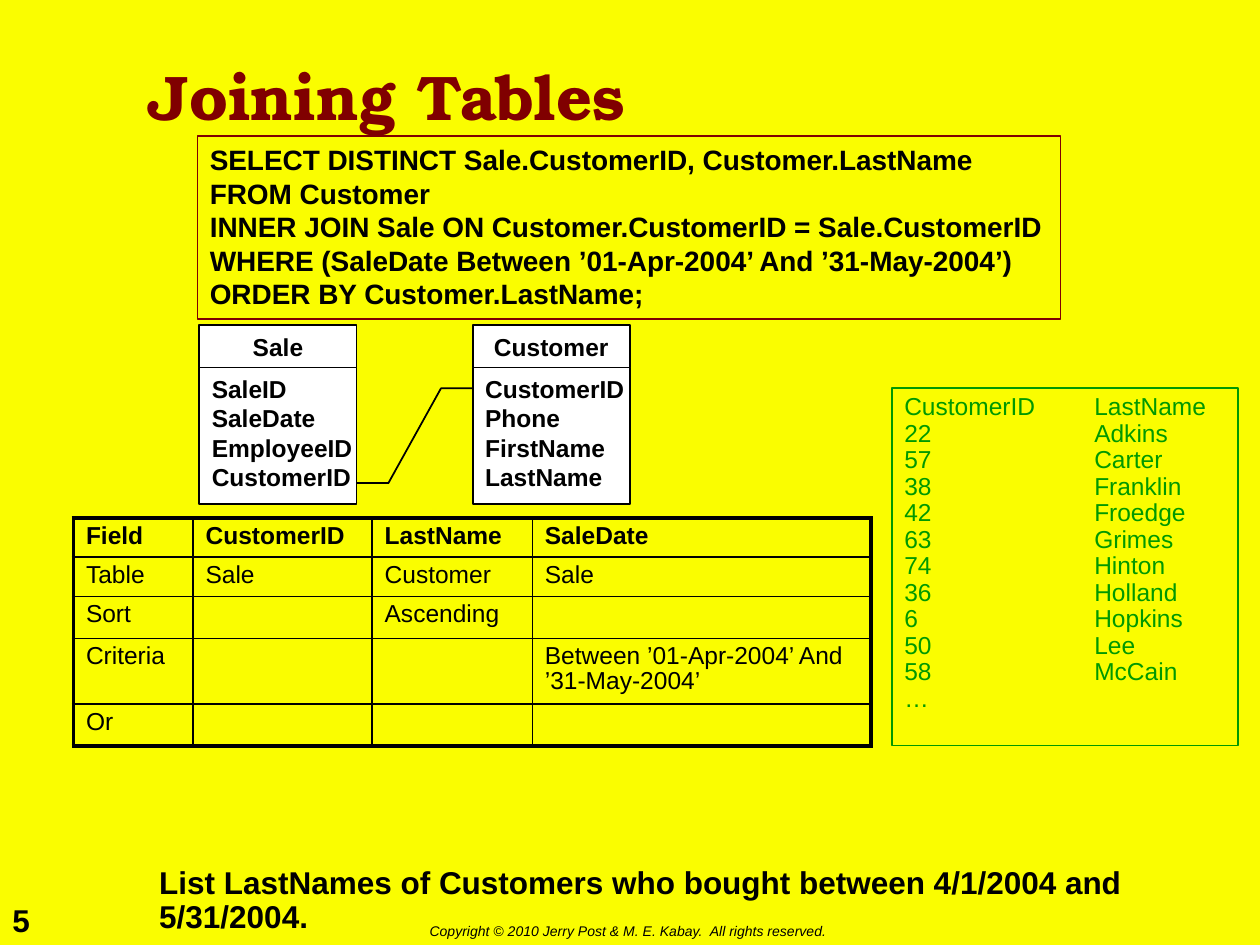
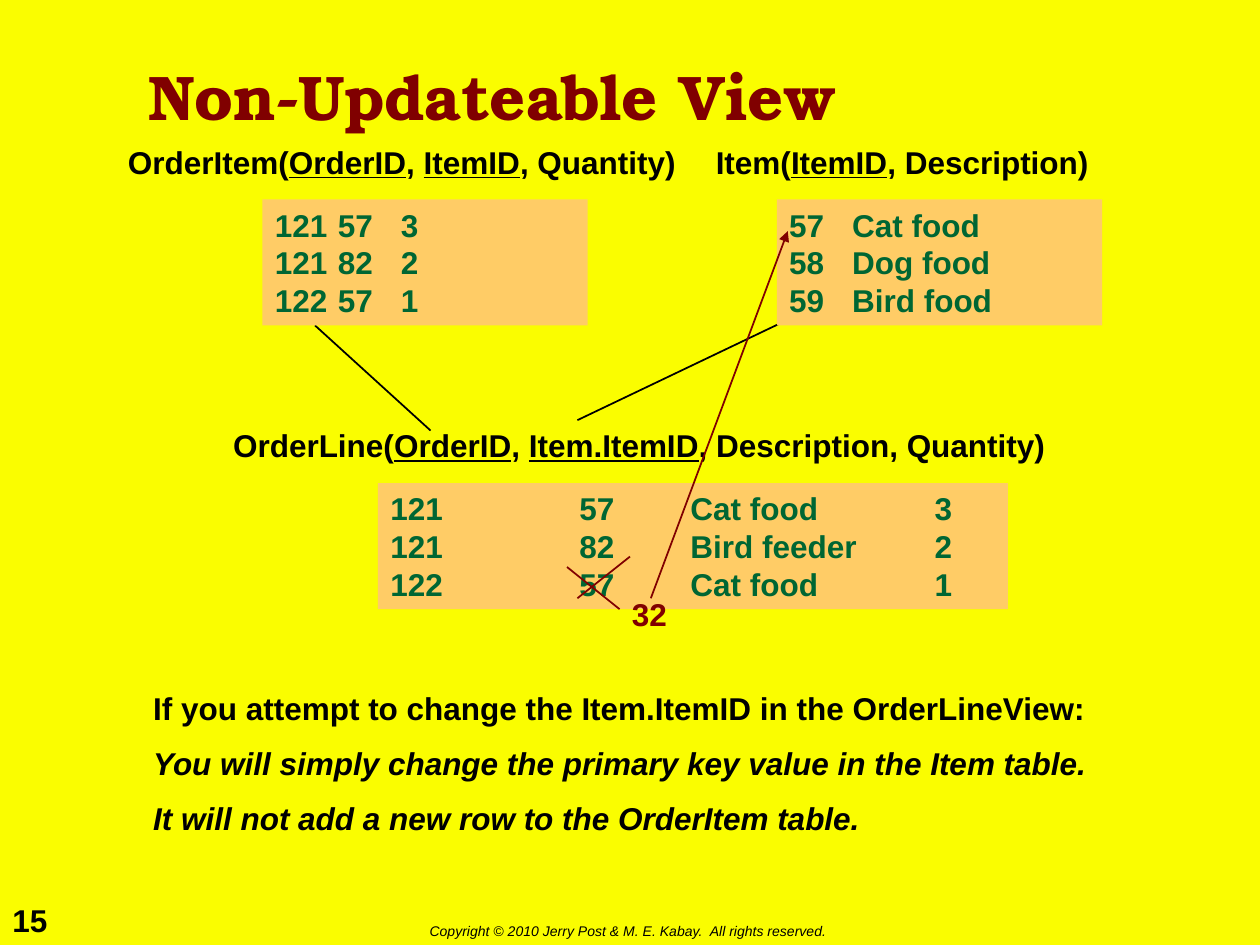
from dataclasses import dataclass
from lxml.etree import SubElement
from pptx import Presentation
from pptx.dml.color import RGBColor
from pptx.enum.shapes import MSO_CONNECTOR, MSO_SHAPE
from pptx.enum.text import MSO_ANCHOR, PP_ALIGN
from pptx.oxml.ns import qn
from pptx.util import Cm, Pt


@dataclass(frozen=True)
class Theme:
    back: RGBColor = RGBColor.from_string("FAFD00")
    black: RGBColor = RGBColor.from_string("000000")
    white: RGBColor = RGBColor.from_string("FFFFFF")
    maroon: RGBColor = RGBColor.from_string("800000")
    green: RGBColor = RGBColor.from_string("009900")
    pine: RGBColor = RGBColor.from_string("006633")
    peach: RGBColor = RGBColor.from_string("FFCC66")
    serif: str = "TeX Gyre Bonum"
    sans: str = "Arial"
    title: int = 36
    large: int = 18
    code: int = 16
    small: int = 14
    foot: int = 8
    thin: float = 1
    thick: float = 2.25


look = Theme()


def write(frame, text, size=look.large, ink=look.black, font=look.sans, bold=True,
          lean=None, wrap=True, mid=False, center=False, pitch=None, gap=0, tabs=()):
    frame.word_wrap = wrap
    frame.vertical_anchor = MSO_ANCHOR.MIDDLE if mid else MSO_ANCHOR.TOP
    for row, line in enumerate(text.split("\n")):
        para = frame.add_paragraph() if row else frame.paragraphs[0]
        if tabs:
            stops = SubElement(para._p.get_or_add_pPr(), qn("a:tabLst"))
            for stop in tabs:
                SubElement(stops, qn("a:tab"), pos=str(Cm(stop)), algn="l")
        para.alignment = PP_ALIGN.CENTER if center else PP_ALIGN.LEFT
        if pitch:
            para.line_spacing = pitch
        if row and gap:
            para.space_before = Pt(gap)
        if not line:
            SubElement(para._p, qn("a:endParaRPr"), sz=str(size * 100))
            continue
        for part, words in enumerate(line.split("_")):
            run = para.add_run()
            run.text = words
            run.font.name, run.font.size = font, Pt(size)
            run.font.bold = bold
            run.font.italic = lean is not None and row >= lean
            run.font.underline = part % 2 == 1
            run.font.color.rgb = ink


def box(page, area, text, fill=None, edge=None, **form):
    place = [Cm(side) for side in area]
    if fill or edge:
        shape = page.shapes.add_shape(MSO_SHAPE.RECTANGLE, *place)
        shape.shadow.inherit = False
    else:
        shape = page.shapes.add_textbox(*place)
    if fill:
        shape.fill.solid()
        shape.fill.fore_color.rgb = fill
    else:
        shape.fill.background()
    if edge:
        shape.line.color.rgb = edge
        shape.line.width = Pt(look.thin)
    else:
        shape.line.fill.background()
    write(shape.text_frame, text, **form)


deck = Presentation()
deck.slide_width, deck.slide_height = Cm(25.4), Cm(19.05)
ground = deck.slide_master.background.fill
ground.solid()
ground.fore_color.rgb = look.back

pages = []
for count, title in (("5", "Joining Tables"), ("15", "Non-Updateable View")):
    page = deck.slides.add_slide(deck.slide_layouts[6])
    box(page, (0, 18.03, 1.27, 1.02), count, wrap=False)
    box(page, (8.41, 18.47, 8.79, 0.61),
        "Copyright © 2010 Jerry Post & M. E. Kabay.  All rights reserved.",
        size=look.foot, bold=False, lean=0, wrap=False)
    box(page, (2.75, 0.43, 19.9, 3.17), title, size=look.title, ink=look.maroon,
        font=look.serif, mid=True, pitch=0.9)
    pages.append(page)
join, view = pages

box(join, (2.96, 17.35, 21.6, 1.7),
    "List LastNames of Customers who bought between 4/1/2004 and 5/31/2004.", pitch=0.9)
query = """SELECT DISTINCT Sale.CustomerID, Customer.LastName
FROM Customer
INNER JOIN Sale ON Customer.CustomerID = Sale.CustomerID
WHERE (SaleDate Between ’01-Apr-2004’ And ’31-May-2004’)
ORDER BY Customer.LastName;"""
box(join, (3.98, 2.75, 17.4, 3.69), query, edge=look.maroon, size=look.code, wrap=False)

cells = (
    ("Field", "CustomerID", "LastName", "SaleDate"),
    ("Table", "Sale", "Customer", "Sale"),
    ("Sort", "", "Ascending", ""),
    ("Criteria", "", "", "Between ’01-Apr-2004’ And ’31-May-2004’"),
    ("Or", "", "", ""),
)
widths = (2.41, 3.61, 3.23, 6.83)
heights = (0.79, 0.79, 0.84, 1.32, 0.84)
grid = join.shapes.add_table(len(heights), len(widths), Cm(1.48), Cm(10.44),
                             Cm(sum(widths)), Cm(sum(heights))).table
grid.first_row = grid.horz_banding = False
for col, width in zip(grid.columns, widths):
    col.width = Cm(width)
for row, height in zip(grid.rows, heights):
    row.height = Cm(height)
for y, line in enumerate(cells):
    for x, text in enumerate(line):
        cell = grid.cell(y, x)
        cell.fill.background()
        write(cell.text_frame, text, size=look.small, bold=y == 0, pitch=0.9)
        props = cell._tc.get_or_add_tcPr()
        outer = (("L", x == 0), ("R", x == len(widths) - 1),
                 ("T", y == 0), ("B", y == len(heights) - 1))
        for spot, (side, rim) in enumerate(outer):
            weight = look.thick if rim else look.thin
            rule = SubElement(props, qn("a:ln" + side), w=str(Pt(weight)))
            ink = SubElement(rule, qn("a:solidFill"))
            SubElement(ink, qn("a:srgbClr"), val=str(look.black))
            props.insert(spot, rule)

result = """CustomerID\tLastName
22\tAdkins
57\tCarter
38\tFranklin
42\tFroedge
63\tGrimes
74\tHinton
36\tHolland
6\tHopkins
50\tLee
58\tMcCain
…"""
box(join, (17.98, 7.83, 6.98, 7.2), result, edge=look.green, size=look.small,
    ink=look.green, bold=False, pitch=0.9, tabs=(3.83,))

for left, name, fields in (
    (4.02, "Sale", "SaleID\nSaleDate\nEmployeeID\nCustomerID"),
    (9.53, "Customer", "CustomerID\nPhone\nFirstName\nLastName"),
):
    frame = dict(fill=look.white, edge=look.black, size=look.small, wrap=False)
    box(join, (left, 7.41, 3.17, 2.75), fields, **frame)
    box(join, (left, 6.56, 3.17, 0.85), name, mid=True, center=True, **frame)

start, *bends = [(Cm(x), Cm(y)) for x, y in
                 ((9.53, 7.83), (8.89, 7.83), (7.83, 9.74), (7.19, 9.74))]
path = join.shapes.build_freeform(*start)
path.add_line_segments(bends, close=False)
key = path.convert_to_shape()
key.shadow.inherit = False
key.fill.background()
key.line.color.rgb = look.black
key.line.width = Pt(look.thin)

for left, top, width, text in (
    (2.33, 2.75, 11.56, "OrderItem(_OrderID_, _ItemID_, Quantity)"),
    (14.18, 2.75, 8.03, "Item(_ItemID_, Description)"),
    (4.45, 8.47, 16.89, "OrderLine(_OrderID_, _Item.ItemID_, Description, Quantity)"),
):
    box(view, (left, top, width, 1.02), text, wrap=False)

for left, top, width, tabs, text in (
    (5.29, 4.02, 6.56, (), "121\t57\t3\n121\t82\t2\n122\t57\t1"),
    (15.66, 4.02, 6.56, (), "57\tCat food\n58\tDog food\n59\tBird food"),
    (7.62, 9.74, 12.7, (3.81, 6.05, 10.97),
     "121\t57\tCat food\t3\n121\t82\tBird feeder\t2\n122\t57\tCat food\t1"),
):
    box(view, (left, top, width, 2.54), text, fill=look.peach, ink=look.pine, tabs=tabs)

notes = """If you attempt to change the Item.ItemID in the OrderLineView:
You will simply change the primary key value in the Item table.
It will not add a new row to the OrderItem table."""
box(view, (2.84, 13.76, 19.69, 3.3), notes, lean=1, gap=10)
box(view, (12.49, 11.87, 1.22, 1.02), "32", ink=look.maroon, wrap=False)

for ends, ink, tip in (
    ((6.35, 6.56, 8.68, 8.68), look.black, False),
    ((16.08, 6.35, 11.64, 8.47), look.black, False),
    ((11.43, 11.43, 12.49, 12.28), look.maroon, False),
    ((11.64, 12.06, 12.7, 11.22), look.maroon, False),
    ((13.12, 12.06, 15.88, 4.66), look.maroon, True),
):
    wire = view.shapes.add_connector(MSO_CONNECTOR.STRAIGHT, *[Cm(end) for end in ends])
    wire.line.color.rgb = ink
    wire.line.width = Pt(look.thin)
    if tip:
        SubElement(wire.line._get_or_add_ln(), qn("a:tailEnd"), type="triangle")
    SubElement(wire._element.spPr, qn("a:effectLst"))
    if ink == look.black:
        view.shapes._spTree.insert(2, wire._element)

deck.save("out.pptx")
